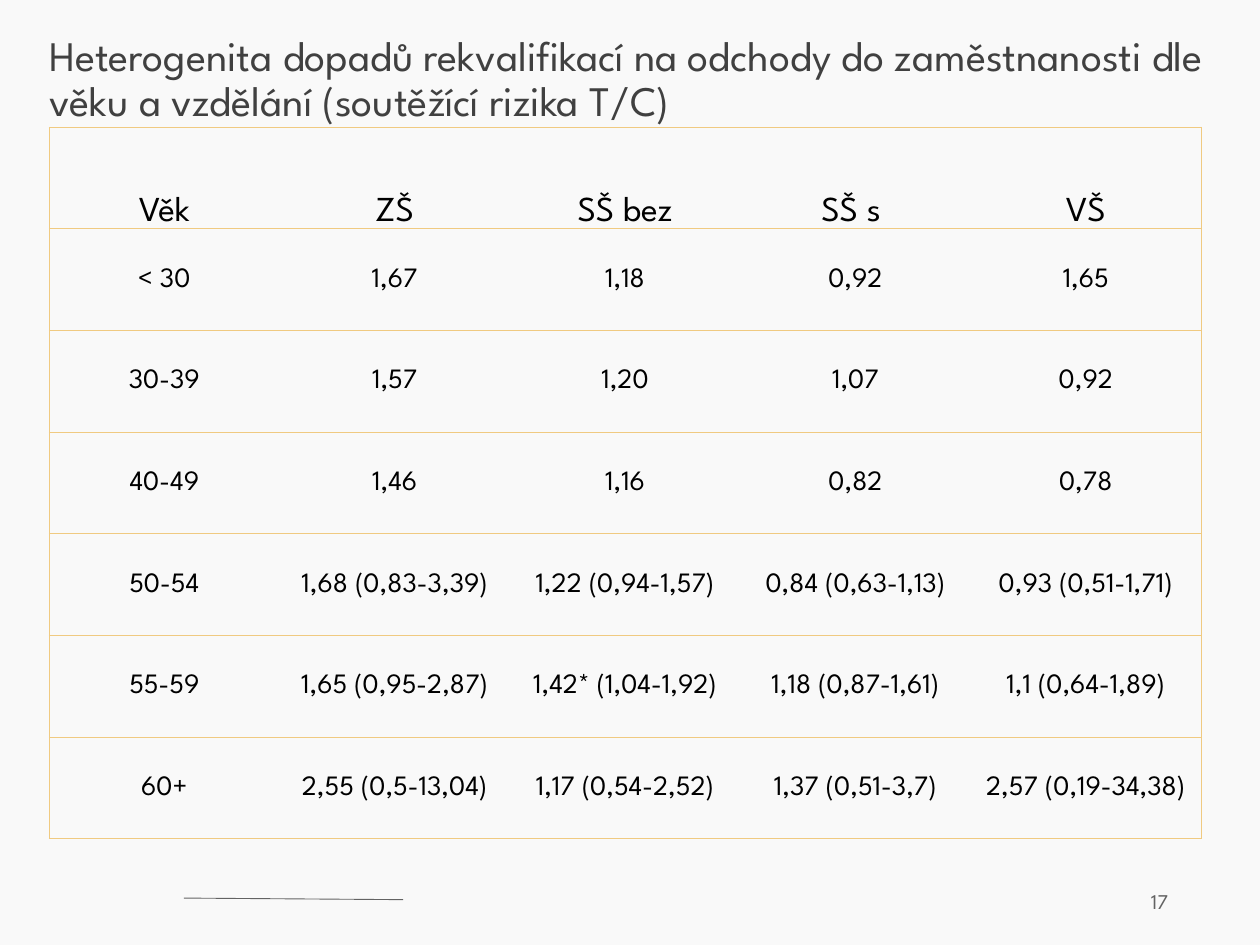
from lxml.etree import SubElement
from pptx import Presentation
from pptx.dml.color import RGBColor
from pptx.enum.shapes import MSO_CONNECTOR
from pptx.enum.text import MSO_ANCHOR as Anchor, PP_ALIGN as Align
from pptx.oxml.ns import qn
from pptx.util import Pt

TITLE = ("Heterogenita dopadů rekvalifikací na odchody do zaměstnanosti dle "
         "věku a vzdělání (soutěžící rizika T/C)")
PAGE_NUMBER = "17"
ROWS = [
    ("Věk", "ZŠ", "SŠ bez", "SŠ s ", "VŠ"),
    ("< 30", "1,67", "1,18", "0,92", "1,65"),
    ("30-39", "1,57", "1,20", "1,07", "0,92"),
    ("40-49", "1,46", "1,16", "0,82", "0,78"),
    ("50-54", "1,68 (0,83-3,39)", "1,22 (0,94-1,57)", "0,84 (0,63-1,13)", "0,93 (0,51-1,71)"),
    ("55-59", "1,65 (0,95-2,87)", "1,42* (1,04-1,92)", "1,18 (0,87-1,61)", "1,1 (0,64-1,89)"),
    ("60+", "2,55 (0,5-13,04)", "1,17 (0,54-2,52)", "1,37 (0,51-3,7)", "2,57 (0,19-34,38)"),
]

FONT = "League Spartan"
BACKGROUND = RGBColor(0xF9, 0xF9, 0xF9)
TITLE_COLOR = RGBColor(0x40, 0x40, 0x40)
FOOTER_COLOR = RGBColor(0x63, 0x63, 0x63)
BLACK = RGBColor(0, 0, 0)
BORDER = RGBColor(0xF0, 0xCA, 0x81)
LINE_WIDTH = Pt(0.5)
NO_STYLE = "{2D5ABB26-0587-4C30-8999-92F81FD0307C}"

LEFT = 28.1
TABLE_TOP = 72.7
COLUMN_WIDTH = 131.65
ROW_HEIGHT = 58.1


def write_text(frame, text, size, color, align=Align.LEFT, line_spacing=None):
    paragraph = frame.paragraphs[0]
    paragraph.text = text
    paragraph.alignment = align
    if line_spacing:
        paragraph.line_spacing = line_spacing
    font = paragraph.runs[0].font
    font.name, font.size, font.color.rgb = FONT, Pt(size), color


def add_text_box(slide, box, text, margin=None, anchor=Anchor.TOP, **text_format):
    frame = slide.shapes.add_textbox(*map(Pt, box)).text_frame
    frame.word_wrap = True
    frame.vertical_anchor = anchor
    if margin is not None:
        frame.margin_left = frame.margin_right = Pt(margin)
        frame.margin_top = frame.margin_bottom = Pt(margin)
    write_text(frame, text, **text_format)


def set_borders(cell, visible):
    """Draw the sides named in visible (letters of LRTB) and hide the others."""
    properties = cell._tc.get_or_add_tcPr()
    for position, side in enumerate("LRTB"):
        line = properties.makeelement(qn("a:ln" + side), {"w": str(LINE_WIDTH)})
        properties.insert(position, line)
        if side in visible:
            fill = SubElement(line, qn("a:solidFill"))
            SubElement(fill, qn("a:srgbClr"), val=str(BORDER))
        else:
            SubElement(line, qn("a:noFill"))


def add_table(slide):
    row_count, column_count = len(ROWS), len(ROWS[0])
    frame = slide.shapes.add_table(
        row_count, column_count, Pt(LEFT), Pt(TABLE_TOP),
        Pt(COLUMN_WIDTH * column_count), Pt(ROW_HEIGHT * row_count))
    table = frame.table
    table.first_row = table.horz_banding = False
    table._tbl.tblPr.find(qn("a:tableStyleId")).text = NO_STYLE
    for column in table.columns:
        column.width = Pt(COLUMN_WIDTH)
    for row_index, values in enumerate(ROWS):
        table.rows[row_index].height = Pt(ROW_HEIGHT)
        is_header = row_index == 0
        for column_index, value in enumerate(values):
            cell = table.cell(row_index, column_index)
            cell.fill.background()
            cell.margin_left = cell.margin_right = cell.margin_top = Pt(0.75)
            cell.margin_bottom = 0
            cell.vertical_anchor = Anchor.BOTTOM if is_header else Anchor.MIDDLE
            write_text(cell.text_frame, value, size=20 if is_header else 16,
                       color=BLACK, align=Align.CENTER)
            sides = "TB"
            if column_index == 0:
                sides += "L"
            if column_index == column_count - 1:
                sides += "R"
            set_borders(cell, sides)


def add_footer(slide):
    line = slide.shapes.add_connector(
        MSO_CONNECTOR.STRAIGHT, Pt(105.1), Pt(513.2), Pt(230.4), Pt(514.1))
    line.line.color.rgb = FOOTER_COLOR
    line.line.width = LINE_WIDTH
    SubElement(line._element.spPr, qn("a:effectLst"))
    add_text_box(slide, (512.6, 500.4, 162, 28.8), PAGE_NUMBER, anchor=Anchor.MIDDLE,
                 size=12, color=FOOTER_COLOR, align=Align.RIGHT)


def main():
    presentation = Presentation()
    presentation.slide_width, presentation.slide_height = Pt(720), Pt(540)
    slide = presentation.slides.add_slide(presentation.slide_layouts[6])
    slide.background.fill.solid()
    slide.background.fill.fore_color.rgb = BACKGROUND
    add_footer(slide)
    add_table(slide)
    add_text_box(slide, (LEFT, 20.2, 687.6, 40.3), TITLE, margin=0,
                 size=24, color=TITLE_COLOR, line_spacing=0.9)
    presentation.save("out.pptx")


if __name__ == "__main__":
    main()
